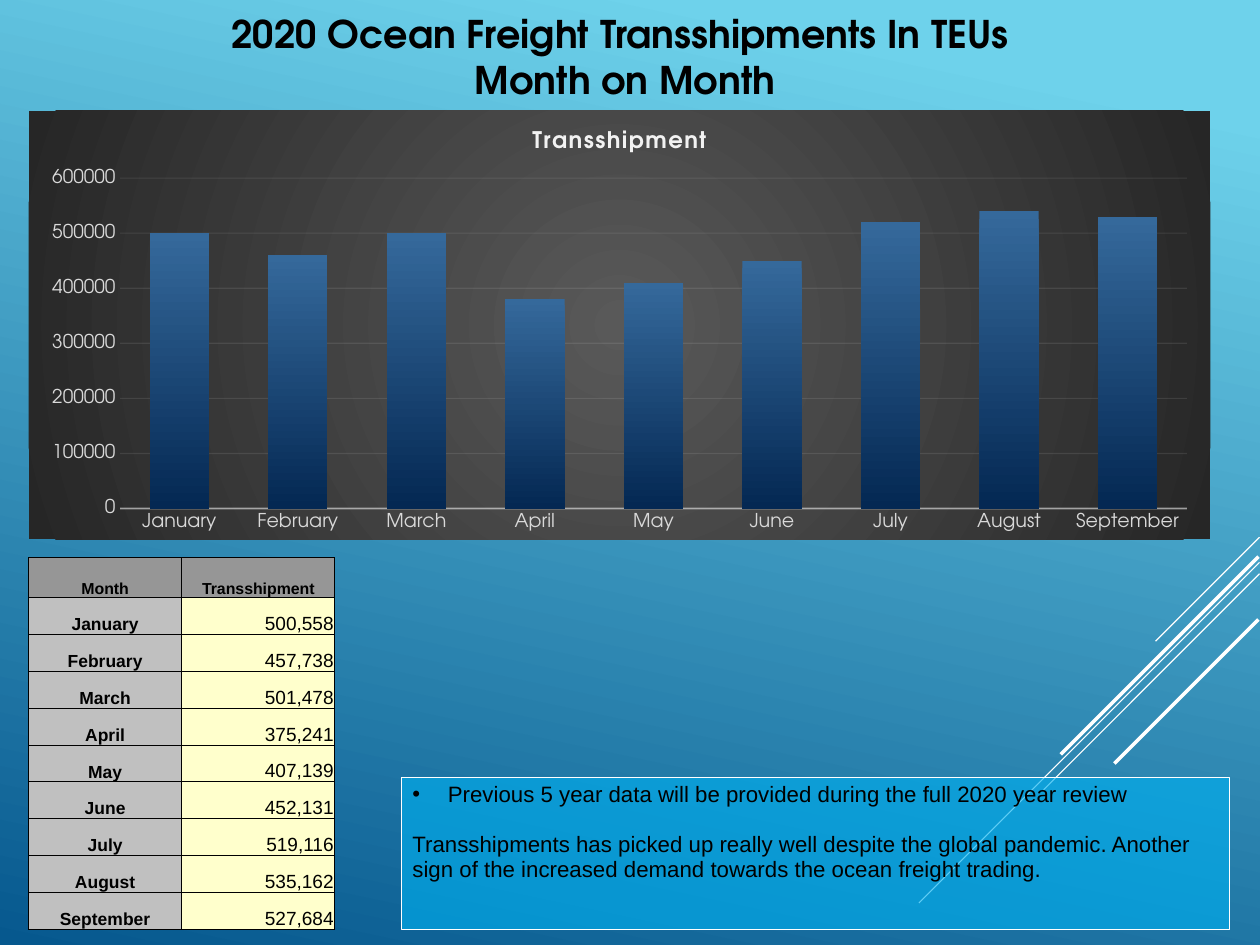
"""Build the slide on 2020 ocean freight transshipments."""
import lxml.etree
import pptx
import pptx.chart.data
import pptx.dml.color
import pptx.enum.chart
import pptx.enum.shapes
import pptx.enum.text
import pptx.oxml
import pptx.oxml.ns
import pptx.util

Inches, Pt, Cm = pptx.util.Inches, pptx.util.Pt, pptx.util.Cm
RGB = pptx.dml.color.RGBColor
ALIGN = pptx.enum.text.PP_ALIGN
ANCHOR = pptx.enum.text.MSO_ANCHOR
qn = pptx.oxml.ns.qn

TITLE = "2020 Ocean Freight Transshipments In TEUs \vMonth on Month"
HEADERS = ("Month", "Transshipment")
VOLUMES = {
    "January": 500558, "February": 457738, "March": 501478,
    "April": 375241, "May": 407139, "June": 452131,
    "July": 519116, "August": 535162, "September": 527684,
}
NOTE = "Previous 5 year data will be provided during the full 2020 year review"
COMMENT = ("Transshipments has picked up really well despite the global pandemic. "
           "Another sign of the increased demand towards the ocean freight trading.")
RAYS = [
    (11.02, 4.7, 0.91, 0.75), (11.02, 4.92, 2.98, 0.75), (11.02, 5.02, 1.89, 0.75),
    (11.01, 4.87, 1.73, 2.25), (11.01, 5.42, 1.26, 2.25),
]

BLACK, WHITE = RGB(0, 0, 0), RGB(255, 255, 255)
SKY, OCEAN = RGB(0x6E, 0xD2, 0xEB), RGB(0x06, 0x58, 0x8E)
BAR_TOP, BAR_FOOT = RGB(0x35, 0x69, 0x9B), RGB(0x04, 0x28, 0x53)
PANEL_IN, PANEL_OUT = RGB(0x59, 0x59, 0x59), RGB(0x26, 0x26, 0x26)
PALE, LABEL = RGB(0xF2, 0xF2, 0xF2), RGB(0xD9, 0xD9, 0xD9)
HEAD, MONTH, VALUE = RGB(0x96, 0x96, 0x96), RGB(0xC0, 0xC0, 0xC0), RGB(0xFF, 0xFF, 0xCC)
NOTE_BLUE = RGB(0x00, 0xB0, 0xF0)
DISPLAY, BODY = "TeX Gyre Adventor", "Arial"


def style(font, size, color, name=BODY, bold=False):
    """Set the look of a font."""
    font.size, font.name, font.bold = Pt(size), name, bold
    font.color.rgb = color


def write(p, text, size, color=BLACK, name=BODY, bold=False, align=None, spacing=0.93):
    """Fill a paragraph with formatted text."""
    p.text, p.alignment, p.line_spacing = text, align, spacing
    for r in p.runs:
        style(r.font, size, color, name, bold)


def gradient(fill, start, end, angle, first=0):
    """Give a fill a two-colour gradient running clockwise at an angle."""
    fill.gradient()
    fill.gradient_angle = 360 - angle
    for stop, color, position in zip(fill.gradient_stops, (start, end), (first, 1)):
        stop.color.rgb, stop.position = color, position


def add_alpha(owner, percent):
    """Make the first solid colour under an element partly transparent."""
    color = next(owner.iter(qn("a:srgbClr")))
    lxml.etree.SubElement(color, qn("a:alpha")).set("val", str(percent * 1000))


def axis_line(line, width, alpha):
    """Draw a pale, translucent chart line."""
    line.color.rgb, line.width = PALE, Pt(width)
    add_alpha(line._ln, alpha)


def add_rays(s):
    """Draw the diagonal lines at the right edge."""
    for x, y, run, width in RAYS:
        ray = s.shapes.add_connector(
            pptx.enum.shapes.MSO_CONNECTOR.STRAIGHT,
            Inches(x), Inches(y), Inches(x - run), Inches(y + run))
        ray.line.color.rgb, ray.line.width = WHITE, Pt(width)
        lxml.etree.SubElement(ray._element.spPr, qn("a:effectLst"))


def add_title(s):
    """Place the slide title."""
    sp = s.shapes.title
    sp.left, sp.top, sp.width, sp.height = map(Inches, (0.51, -0.2, 9.92, 1.38))
    tf = sp.text_frame
    tf.auto_size = pptx.enum.text.MSO_AUTO_SIZE.NONE
    tf.vertical_anchor = ANCHOR.MIDDLE
    write(tf.paragraphs[0], TITLE, 24, name=DISPLAY, bold=True,
          align=ALIGN.CENTER, spacing=1.0)


def add_volume_chart(s):
    """Draw the monthly columns on a dark panel."""
    data = pptx.chart.data.CategoryChartData()
    data.categories = list(VOLUMES)
    data.add_series(HEADERS[1], [round(volume, -4) for volume in VOLUMES.values()])
    chart = s.shapes.add_chart(
        pptx.enum.chart.XL_CHART_TYPE.COLUMN_CLUSTERED,
        Inches(0.25), Inches(0.97), Inches(10.34), Inches(3.75), data).chart
    style(chart.font, 12, WHITE, DISPLAY)
    chart.has_legend = False
    chart.has_title = True
    p = chart.chart_title.text_frame.paragraphs[0]
    write(p, HEADERS[1], 14.4, PALE, DISPLAY, True, spacing=None)
    p.runs[0]._r.rPr.set("spc", "100")
    plot = chart.plots[0]
    plot.gap_width, plot.overlap, plot.vary_by_categories = 100, -24, False
    gradient(plot.series[0].format.fill, BAR_TOP, BAR_FOOT, 90)
    for axis in (chart.category_axis, chart.value_axis):
        axis.major_tick_mark = axis.minor_tick_mark = pptx.enum.chart.XL_TICK_MARK.NONE
        style(axis.tick_labels.font, 12, LABEL, DISPLAY)
    axis_line(chart.category_axis.format.line, 1, 54)
    chart.value_axis.format.line.fill.background()
    axis_line(chart.value_axis.major_gridlines.format.line, 0.75, 10)
    panel = pptx.oxml.parse_xml(
        f'<c:spPr {pptx.oxml.ns.nsdecls("c", "a")}><a:gradFill><a:gsLst>'
        f'<a:gs pos="0"><a:srgbClr val="{PANEL_IN}"/></a:gs>'
        f'<a:gs pos="100000"><a:srgbClr val="{PANEL_OUT}"/></a:gs></a:gsLst>'
        '<a:path path="circle"><a:fillToRect l="50000" t="50000" r="50000" b="50000"/>'
        '</a:path></a:gradFill><a:ln><a:noFill/></a:ln></c:spPr>')
    chart._chartSpace.find(qn("c:chart")).addnext(panel)


def fill_cell(cell, text, size, fill, bold=True, align=ALIGN.CENTER):
    """Write, colour and border one table cell."""
    cell.margin_left = cell.margin_right = cell.margin_top = Inches(0.01)
    cell.margin_bottom = 0
    cell.vertical_anchor = ANCHOR.BOTTOM
    write(cell.text_frame.paragraphs[0], text, size, bold=bold, align=align)
    tcPr = cell._tc.get_or_add_tcPr()
    for side in ("a:lnL", "a:lnR", "a:lnT", "a:lnB"):
        ln = lxml.etree.SubElement(tcPr, qn(side), w=str(Pt(0.5)))
        solid = lxml.etree.SubElement(ln, qn("a:solidFill"))
        lxml.etree.SubElement(solid, qn("a:srgbClr"), val=str(BLACK))
    cell.fill.solid()
    cell.fill.fore_color.rgb = fill


def add_volume_table(s):
    """List the monthly volumes."""
    height, head = 3.25, 0.35
    table = s.shapes.add_table(len(VOLUMES) + 1, 2, Inches(0.25), Inches(4.88),
                               Inches(2.68), Inches(height)).table
    for row in table.rows:
        row.height = Inches((height - head) / len(VOLUMES))
    table.rows[0].height = Inches(head)
    for col, text in enumerate(HEADERS):
        fill_cell(table.cell(0, col), text, 10, HEAD)
    for row, (month, volume) in enumerate(VOLUMES.items(), 1):
        fill_cell(table.cell(row, 0), month, 11, MONTH)
        fill_cell(table.cell(row, 1), f"{volume:,}", 12, VALUE, False, ALIGN.RIGHT)


def add_note(s):
    """Place the translucent comment box."""
    sp = s.shapes.add_shape(pptx.enum.shapes.MSO_SHAPE.RECTANGLE,
                            Inches(3.51), Inches(6.8), Inches(7.25), Inches(1.33))
    sp.shadow.inherit = False
    sp.fill.solid()
    sp.fill.fore_color.rgb = NOTE_BLUE
    add_alpha(sp._element.spPr, 63)
    sp.line.color.rgb, sp.line.width = WHITE, Pt(0.75)
    tf = sp.text_frame
    tf.word_wrap, tf.vertical_anchor = True, ANCHOR.TOP
    p = tf.paragraphs[0]
    write(p, NOTE, 14, align=ALIGN.LEFT)
    pPr = p._p.get_or_add_pPr()
    pPr.set("marL", str(Inches(0.31)))
    pPr.set("indent", str(-Inches(0.31)))
    lxml.etree.SubElement(pPr, qn("a:buFont"), typeface=BODY)
    lxml.etree.SubElement(pPr, qn("a:buChar"), char="•")
    p = tf.add_paragraph()
    write(p, COMMENT, 14, align=ALIGN.LEFT)
    p.space_before = Pt(15.75)


def main():
    """Assemble and save the slide."""
    prs = pptx.Presentation()
    prs.slide_width, prs.slide_height = Cm(28), Cm(21)
    s = prs.slides.add_slide(prs.slide_layouts[5])
    gradient(s.background.fill, SKY, OCEAN, 102, 0.1)
    add_rays(s)
    add_title(s)
    add_volume_chart(s)
    add_volume_table(s)
    add_note(s)
    prs.save("out.pptx")


if __name__ == "__main__":
    main()
